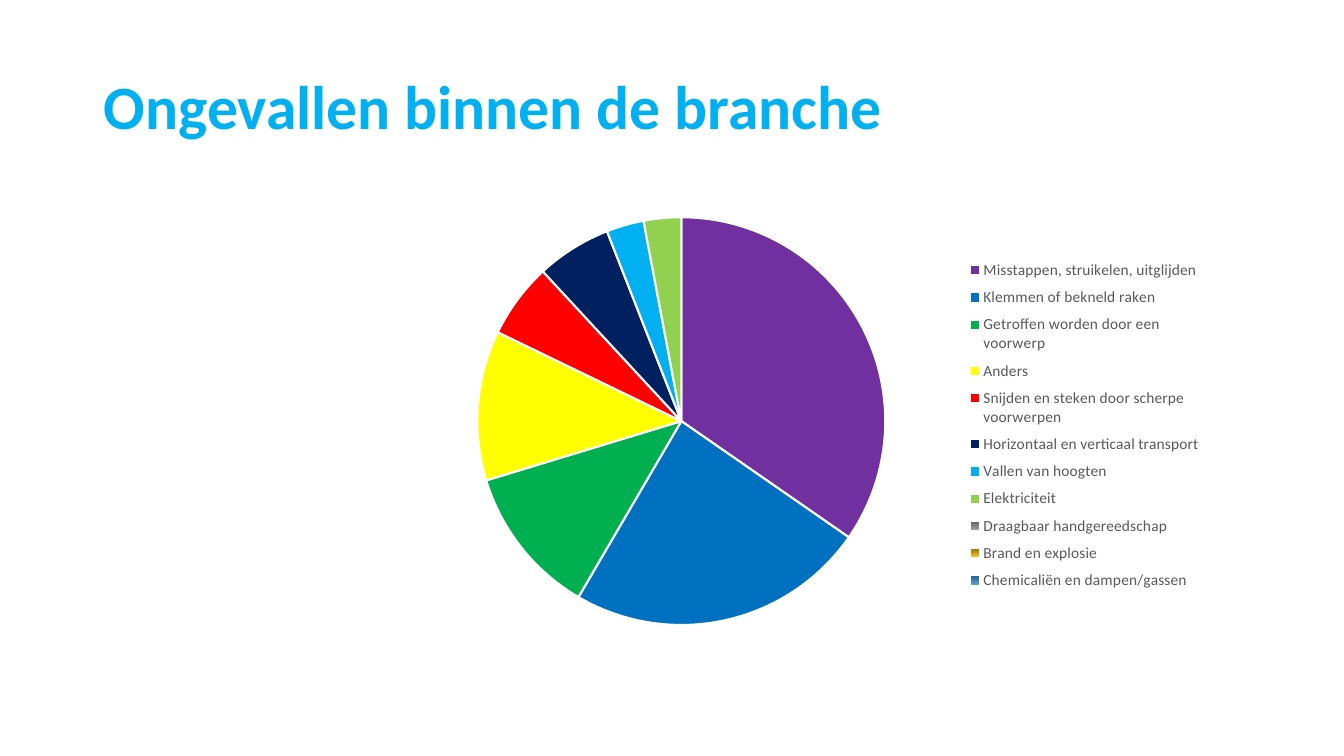
"""Build a slide with a pie chart of accidents in the industry."""
from lxml import etree
from pptx import Presentation
from pptx import util as u
from pptx.chart.data import CategoryChartData
from pptx.dml.color import RGBColor
from pptx.enum import chart as chart_enum
from pptx.enum import text
from pptx.oxml.ns import qn

SKY = RGBColor(0x00, 0xB0, 0xF0)
PURPLE = RGBColor(0x70, 0x30, 0xA0)
BLUE = RGBColor(0x00, 0x70, 0xC0)
GREEN = RGBColor(0x00, 0xB0, 0x50)
YELLOW = RGBColor(0xFF, 0xFF, 0x00)
RED = RGBColor(0xFF, 0x00, 0x00)
NAVY = RGBColor(0x00, 0x20, 0x60)
LIME = RGBColor(0x92, 0xD0, 0x50)
GREY_SHADES = (RGBColor(0x63, 0x63, 0x63), RGBColor(0xA1, 0xA1, 0xA1))
GOLD_SHADES = (RGBColor(0x99, 0x73, 0x00), RGBColor(0xFF, 0xCA, 0x29))
STEEL_SHADES = (RGBColor(0x25, 0x5E, 0x91), RGBColor(0x63, 0xA0, 0xD7))
WHITE = RGBColor(0xFF, 0xFF, 0xFF)
BLACK = RGBColor(0x00, 0x00, 0x00)
LEGEND_GREY = RGBColor(0x59, 0x59, 0x59)

ACCIDENTS = [
    ("Misstappen, struikelen, uitglijden", 35, PURPLE),
    ("Klemmen of bekneld raken", 24, BLUE),
    ("Getroffen worden door een voorwerp", 12, GREEN),
    ("Anders", 12, YELLOW),
    ("Snijden en steken door scherpe voorwerpen", 6, RED),
    ("Horizontaal en verticaal transport", 6, NAVY),
    ("Vallen van hoogten", 3, SKY),
    ("Elektriciteit", 3, LIME),
    ("Draagbaar handgereedschap", 0, GREY_SHADES),
    ("Brand en explosie", 0, GOLD_SHADES),
    ("Chemicaliën en dampen/gassen", 0, STEEL_SHADES),
]


class SlideBuilder:
    """Holds the style and the slide; places elements by shares of its size."""

    font_name = "Calibri"

    def __init__(self, presentation):
        self.width = presentation.slide_width
        self.height = presentation.slide_height
        self.slide = presentation.slides.add_slide(presentation.slide_layouts[6])

    def area(self, left, top, width, height):
        """Turn shares of the slide into lengths."""
        return (int(left * self.width), int(top * self.height),
                int(width * self.width), int(height * self.height))

    def style(self, font, size, color, bold=False):
        """Apply the slide's typeface to a font."""
        font.name = self.font_name
        font.size = u.Pt(size)
        font.bold = bold
        font.color.rgb = color

    def title(self, wording, *shares):
        """Add the slide heading."""
        frame = self.slide.shapes.add_textbox(*self.area(*shares)).text_frame
        frame.word_wrap = True
        frame.vertical_anchor = text.MSO_ANCHOR.MIDDLE
        paragraph = frame.paragraphs[0]
        paragraph.text = wording
        paragraph.line_spacing = 0.9
        self.style(paragraph.font, 44, SKY, bold=True)

    def pie(self, rows, *shares):
        """Add a pie chart with a legend on its right."""
        data = CategoryChartData()
        data.categories = [name for name, _, _ in rows]
        data.add_series("Series 1", [value for _, value, _ in rows])
        chart = self.slide.shapes.add_chart(
            chart_enum.XL_CHART_TYPE.PIE, *self.area(*shares), data).chart
        self.style(chart.font, 10, BLACK)
        chart.has_title = False
        chart.has_legend = True
        chart.legend.position = chart_enum.XL_LEGEND_POSITION.RIGHT
        chart.legend.include_in_layout = False
        self.style(chart.legend.font, 11, LEGEND_GREY)
        plot = chart.plots[0]
        plot.vary_by_categories = True
        for index, (_, _, color) in enumerate(rows):
            self.paint(plot.series[0].points[index].format, color)
        plot_area = chart.element.find(".//" + qn("c:plotArea"))
        self.lay_out(plot_area, 0, 0.09, 0.03, 0.51, 0.93, inner=True)
        self.lay_out(chart.legend._element, 1, 0.69, 0.11, 0.31, 0.79)

    def paint(self, slice_format, color):
        """Fill one slice with a colour or a pair of gradient shades."""
        if isinstance(color, RGBColor):
            slice_format.fill.solid()
            slice_format.fill.fore_color.rgb = color
        else:
            slice_format.fill.gradient()
            slice_format.fill.gradient_angle = 270
            for stop, shade in zip(slice_format.fill.gradient_stops, color):
                stop.color.rgb = shade
        slice_format.line.color.rgb = WHITE
        slice_format.line.width = u.Pt(1.5)

    def lay_out(self, element, index, left, top, width, height, inner=False):
        """Fix a chart part's place as shares of the chart."""
        for old in element.findall(qn("c:layout")):
            element.remove(old)
        layout = etree.Element(qn("c:layout"))
        manual = etree.SubElement(layout, qn("c:manualLayout"))
        settings = [("layoutTarget", "inner")] if inner else []
        settings += [("xMode", "edge"), ("yMode", "edge"), ("x", left),
                     ("y", top), ("w", width), ("h", height)]
        for tag, value in settings:
            etree.SubElement(manual, qn("c:" + tag)).set("val", str(value))
        element.insert(index, layout)


def main():
    """Build and save the presentation."""
    presentation = Presentation()
    presentation.slide_width = u.Inches(13.33)
    presentation.slide_height = u.Inches(7.5)
    builder = SlideBuilder(presentation)
    builder.title("Ongevallen binnen de branche", 0.07, 0.05, 0.86, 0.19)
    builder.pie(ACCIDENTS, 0.3, 0.27, 0.6, 0.58)
    presentation.save("out.pptx")


if __name__ == "__main__":
    main()
